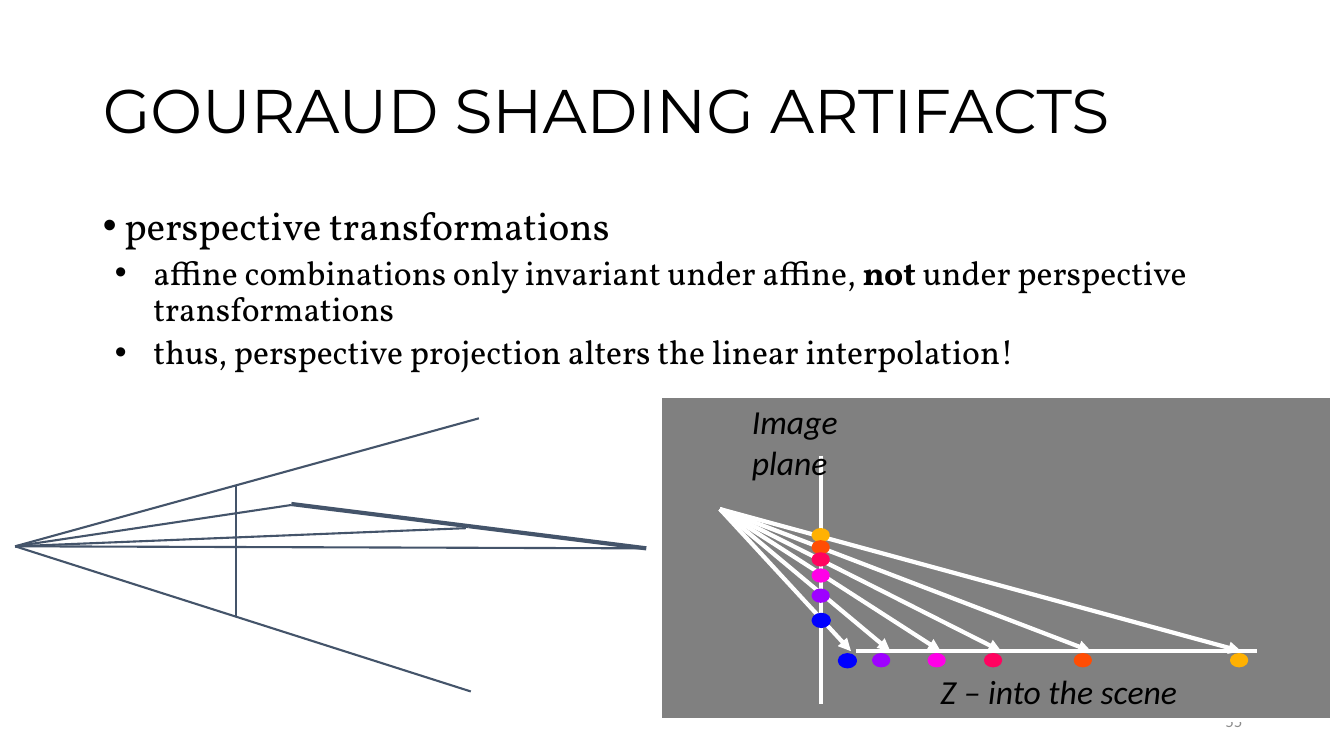
from lxml import etree
from pptx import Presentation
from pptx.dml.color import RGBColor
from pptx.enum.shapes import MSO_CONNECTOR, MSO_SHAPE
from pptx.enum.text import MSO_ANCHOR, MSO_AUTO_SIZE, PP_ALIGN
from pptx.oxml.ns import qn
from pptx.util import Inches, Pt

STRAIGHT = MSO_CONNECTOR.STRAIGHT
RECTANGLE, OVAL = MSO_SHAPE.RECTANGLE, MSO_SHAPE.OVAL
TOP, MIDDLE = MSO_ANCHOR.TOP, MSO_ANCHOR.MIDDLE
NO_FIT, GROW = MSO_AUTO_SIZE.NONE, MSO_AUTO_SIZE.SHAPE_TO_FIT_TEXT
LEFT, RIGHT = PP_ALIGN.LEFT, PP_ALIGN.RIGHT

BLACK = RGBColor(0x00, 0x00, 0x00)
WHITE = RGBColor(0xFF, 0xFF, 0xFF)
GREY = RGBColor(0x80, 0x80, 0x80)
PALE_GREY = RGBColor(0x8C, 0x8C, 0x8C)
SLATE = RGBColor(0x44, 0x54, 0x6A)
BLUE = RGBColor(0x00, 0x00, 0xFF)
PURPLE = RGBColor(0x9E, 0x01, 0xFF)
MAGENTA = RGBColor(0xFF, 0x00, 0xE7)
CRIMSON = RGBColor(0xFF, 0x03, 0x60)
ORANGE = RGBColor(0xFF, 0x4D, 0x04)
AMBER = RGBColor(0xFF, 0xB1, 0x02)

THIN, THICK = 1.5, 3
EYE = (0.15, 5.42)
CAMERA = (7.14, 5.05)
PLANE_X, DEPTH_Y = 8.14, 6.46

# View frustum: end of each line from the eye
EYE_RAYS = [(4.75, 4.15), (4.67, 6.86), (2.89, 5.01), (4.62, 5.24), (6.36, 5.44)]
EDGE = [(2.89, 5), (4.65, 5.22), (6.41, 5.44)]

# Colour, ray end, left of the dot on the depth axis, top of the dot on the plane
SAMPLES = [
    (BLUE, 8.44, 8.33, 6.1),
    (PURPLE, 8.83, 8.67, 5.86),
    (MAGENTA, 9.33, 9.22, 5.66),
    (CRIMSON, 9.93, 9.78, 5.5),
    (ORANGE, 10.82, 10.67, 5.38),
    (AMBER, 12.31, 12.22, 5.26),
]

# Level, then (text, bold) spans
POINTS = [
    (0, [(" perspective transformations", False)]),
    (1, [("affine combinations only invariant under affine, ", False),
         ("not ", True), ("under perspective transformations", False)]),
    (1, [("thus, perspective projection alters the linear interpolation!", False)]),
]
# Size, space before, left margin and first-line indent of each level
LEVELS = [(28, 10, 0, 0), (24, 5, 0.5, -0.38)]


def set_all(target, values):
    for name, value in values.items():
        setattr(target, name, value)


def format_span(span, face, size, color=BLACK, **styles):
    set_all(span.font, {"name": face, "size": Pt(size), **styles})
    span.font.color.rgb = color


def place(shape, left, top, width, height):
    set_all(shape, {"left": Inches(left), "top": Inches(top),
                    "width": Inches(width), "height": Inches(height)})


def set_bullet(para, margin, indent):
    properties = para._p.get_or_add_pPr()
    properties.set("marL", str(Inches(margin)))
    properties.set("indent", str(Inches(indent)))
    etree.SubElement(properties, qn("a:buFont"), typeface="Arial")
    etree.SubElement(properties, qn("a:buChar"), char="•")


def fill_title(title):
    place(title, 0.92, 0.4, 11.5, 1.45)
    set_all(title.text_frame, {"vertical_anchor": MIDDLE, "auto_size": NO_FIT})
    para = title.text_frame.paragraphs[0]
    para.text = "GOURAUD SHADING ARTIFACTS"
    set_all(para, {"alignment": LEFT, "line_spacing": 0.9})
    format_span(para.runs[0], "Montserrat", 44)


def fill_body(body):
    place(body, 0.92, 2, 11.5, 4.76)
    frame = body.text_frame
    set_all(frame, {"vertical_anchor": TOP, "auto_size": NO_FIT})
    for index, (level, spans) in enumerate(POINTS):
        para = frame.add_paragraph() if index else frame.paragraphs[0]
        size, before, margin, indent = LEVELS[level]
        set_all(para, {"level": level, "line_spacing": 0.9, "space_before": Pt(before)})
        set_bullet(para, margin, indent)
        for text, bold in spans:
            span = para.add_run()
            span.text = text
            format_span(span, "Vollkorn", size, bold=bold)


def add_label(page, text, box, size=24, color=BLACK, align=LEFT, italic=True, **frame_values):
    label = page.shapes.add_textbox(*map(Inches, box))
    set_all(label.text_frame, {"word_wrap": False, **frame_values})
    para = label.text_frame.paragraphs[0]
    para.text = text
    para.alignment = align
    for span in para.runs:
        format_span(span, "Calibri", size, color, italic=italic)


def add_line(shapes, start, end, color, width, arrow=False):
    line = shapes.add_connector(STRAIGHT, *map(Inches, start + end))
    line.line.color.rgb = color
    line.line.width = Pt(width)
    if arrow:
        etree.SubElement(line.line._get_or_add_ln(), qn("a:tailEnd"), type="triangle")
    etree.SubElement(line._element.spPr, qn("a:effectLst"))


def add_filled(page, kind, box, fill, outline):
    shape = page.shapes.add_shape(kind, *map(Inches, box))
    shape.shadow.inherit = False
    shape.fill.solid()
    shape.fill.fore_color.rgb = fill
    shape.line.color.rgb = outline
    shape.line.width = Pt(THICK)


def draw_frustum(page):
    shapes = page.shapes.add_group_shape().shapes
    for end in EYE_RAYS:
        add_line(shapes, EYE, end, SLATE, THIN)
    add_line(shapes, (2.34, 4.81), (2.34, 6.11), SLATE, THIN)
    for start, end in zip(EDGE, EDGE[1:]):
        add_line(shapes, start, end, SLATE, THICK)


def draw_projection(page):
    add_filled(page, RECTANGLE, (6.55, 3.93, 6.66, 3.21), GREY, WHITE)
    # Image plane, rays and depth axis
    add_line(page.shapes, (PLANE_X, 4.52), (PLANE_X, 6.98), WHITE, THICK)
    for _, ray_end, _, _ in SAMPLES:
        add_line(page.shapes, CAMERA, (ray_end, DEPTH_Y), WHITE, THICK, arrow=True)
    add_line(page.shapes, (8.49, DEPTH_Y), (12.47, DEPTH_Y), WHITE, THICK)
    add_label(page, "Z – into the scene", (9.23, 6.61, 2.66, 0.5), auto_size=GROW)
    add_label(page, "Image\nplane", (7.36, 3.93, 1.14, 0.91), auto_size=GROW)
    # Colour samples, the amber one under its orange neighbour
    for color, _, depth_left, plane_top in reversed(SAMPLES):
        size = (0.15, 0.11) if color == BLUE else (0.14, 0.1)
        for corner in ((8.07, plane_top), (depth_left, 6.5)):
            add_filled(page, OVAL, corner + size, color, color)


def main():
    deck = Presentation()
    deck.slide_width, deck.slide_height = Inches(13.33), Inches(7.5)
    page = deck.slides.add_slide(deck.slide_layouts[1])
    fill_title(page.shapes.title)
    fill_body(page.placeholders[1])
    # Page number, partly behind the projection panel
    add_label(page, "55", (9.42, 6.95, 3, 0.4), 12, PALE_GREY, RIGHT, False,
              word_wrap=True, vertical_anchor=MIDDLE)
    draw_frustum(page)
    draw_projection(page)
    deck.save("out.pptx")


if __name__ == "__main__":
    main()
